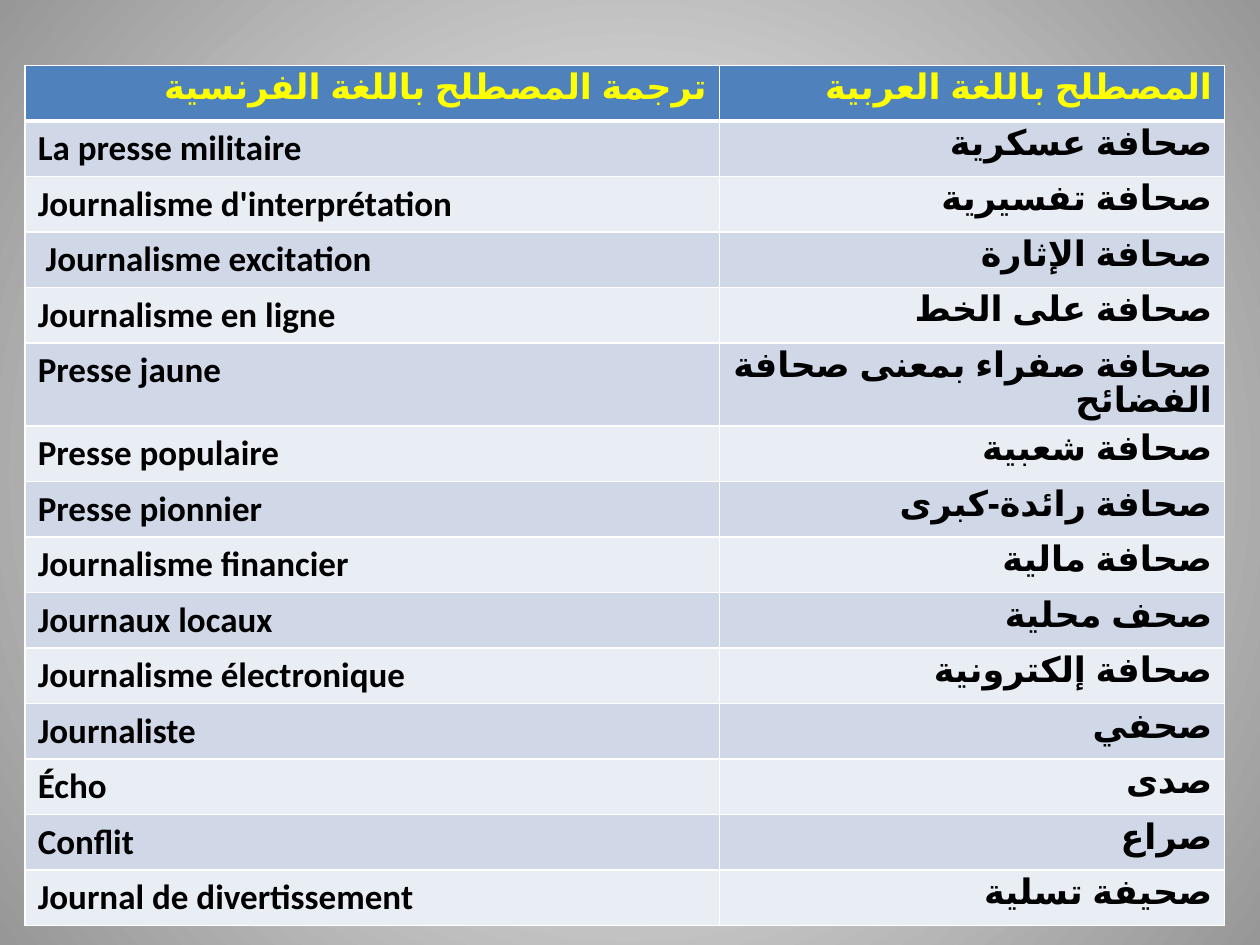
from dataclasses import dataclass

from lxml import etree
from pptx import Presentation
from pptx.dml.color import RGBColor as RGB
from pptx.enum.lang import MSO_LANGUAGE_ID as LANG
from pptx.enum.text import PP_ALIGN as ALIGN
from pptx.oxml import parse_xml
from pptx.oxml.ns import nsdecls, qn
from pptx.util import Inches, Pt


@dataclass(frozen=True)
class Theme:
    font: str = "Calibri"
    size: int = 20
    header_text: str = "FFFF00"
    body_text: str = "000000"
    header_fill: str = "4F81BD"
    bands: tuple = ("D0D8E8", "E9EDF4")
    border: str = "FFFFFF"
    glow: tuple = ("FFFFFF", "979797")


THEME = Theme()

HEADER = ("ترجمة المصطلح باللغة الفرنسية", "المصطلح باللغة العربية")
TERMS = [
    ("La presse militaire", "صحافة عسكرية"),
    ("Journalisme d'interprétation", "صحافة تفسيرية"),
    (" Journalisme excitation", "صحافة الإثارة"),
    ("Journalisme en ligne", "صحافة على الخط"),
    ("Presse jaune", "صحافة صفراء بمعنى صحافة الفضائح"),
    ("Presse populaire", "صحافة شعبية"),
    ("Presse pionnier", "صحافة رائدة-كبرى"),
    ("Journalisme financier", "صحافة مالية"),
    ("Journaux locaux", "صحف محلية"),
    ("Journalisme électronique", "صحافة إلكترونية"),
    ("Journaliste", "صحفي"),
    ("Écho", "صدى"),
    ("Conflit", "صراع"),
    ("Journal de divertissement", "صحيفة تسلية"),
]
TALL_ROW = 5  # its Arabic term takes two lines


def paint_background(slide):
    """Radial gradient, light in the middle and grey at the edges."""
    fill = slide.background.fill
    fill.gradient()
    for stop, color, position in zip(fill.gradient_stops, THEME.glow, (0, 1)):
        stop.color.rgb = RGB.from_string(color)
        stop.position = position
    # Replace the linear direction by a circular one
    grad = slide.background._cSld.find(".//" + qn("a:gradFill"))
    grad.remove(grad.find(qn("a:lin")))
    circle = parse_xml(f'<a:path {nsdecls("a")} path="circle"/>')
    etree.SubElement(circle, qn("a:fillToRect"),
                     {side: "50000" for side in "ltrb"})
    grad.find(qn("a:gsLst")).addnext(circle)


def set_borders(cell, bottom):
    """White lines of 1 pt, with a bottom line of the given width."""
    tcPr = cell._tc.get_or_add_tcPr()
    for i, side in enumerate("LRTB"):
        width = Pt(bottom if side == "B" else 1)
        tcPr.insert(i, parse_xml(
            f'<a:ln{side} {nsdecls("a")} w="{width}"><a:solidFill>'
            f'<a:srgbClr val="{THEME.border}"/></a:solidFill></a:ln{side}>'))


def write_cell(cell, text, fill, color, rtl):
    cell.fill.solid()
    cell.fill.fore_color.rgb = RGB.from_string(fill)
    p = cell.text_frame.paragraphs[0]
    p.text = text
    font = p.runs[0].font
    font.name, font.size, font.bold = THEME.font, Pt(THEME.size), True
    font.color.rgb = RGB.from_string(color)
    font.language_id = LANG.ARABIC_ALGERIA if rtl else LANG.FRENCH
    if rtl:
        p.alignment = ALIGN.RIGHT
        p._p.get_or_add_pPr().set("rtl", "1")


def add_glossary(slide, left, top, col_widths, row_height):
    """Two-column glossary: French terms beside the Arabic ones."""
    rows = [HEADER] + TERMS
    table = slide.shapes.add_table(
        len(rows), len(col_widths), left, top,
        sum(col_widths), row_height * len(rows)).table
    for column, width in zip(table.columns, col_widths):
        column.width = width
    table.rows[TALL_ROW].height = int(row_height * 1.5)
    for i, row in enumerate(rows):
        is_header = i == 0
        fill = THEME.header_fill if is_header else THEME.bands[(i - 1) % 2]
        color = THEME.header_text if is_header else THEME.body_text
        for j, text in enumerate(row):
            cell = table.cell(i, j)
            write_cell(cell, text, fill, color, rtl=is_header or j == 1)
            set_borders(cell, bottom=3 if is_header else 1)


def main():
    prs = Presentation()
    prs.slide_width, prs.slide_height = Inches(10), Inches(7.5)
    slide = prs.slides.add_slide(prs.slide_layouts[6])
    paint_background(slide)
    add_glossary(slide, Inches(0.2), Inches(0.52),
                 (Inches(5.51), Inches(4.01)), Inches(0.44))
    prs.save("out.pptx")


if __name__ == "__main__":
    main()
